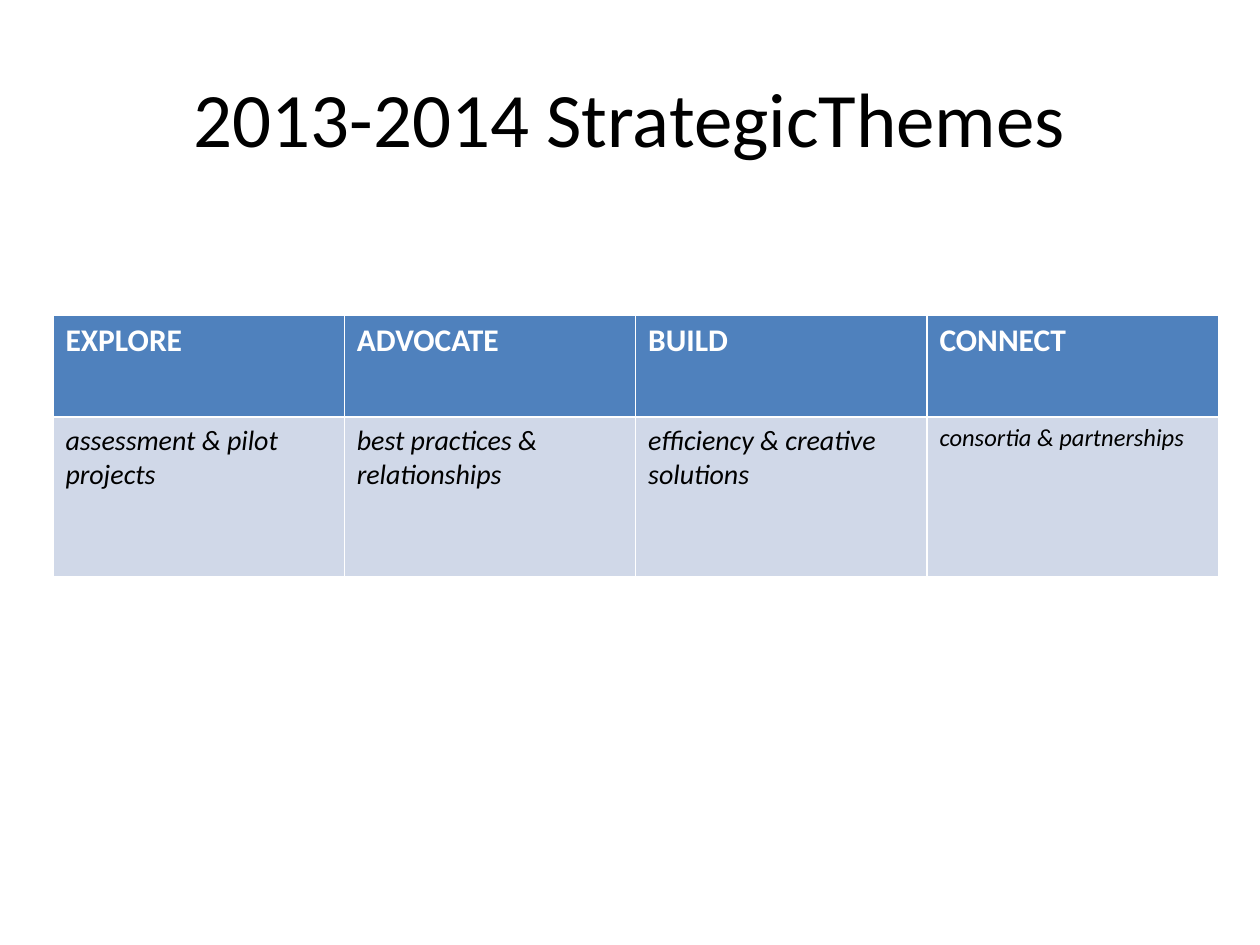
import dataclasses

import pptx
import pptx.dml.color
import pptx.enum.text
import pptx.util
from pptx.util import Inches


@dataclasses.dataclass(frozen=True)
class Theme:
    font: str = "Calibri"
    text: str = "000000"
    header_text: str = "FFFFFF"
    header_fill: str = "4F81BD"
    body_fill: str = "D0D8E8"
    title_size: int = 44
    header_size: int = 18
    body_size: int = 16
    small_size: int = 14


THEME = Theme()
TITLE = "2013-2014 StrategicThemes"
STRATEGIC_THEMES = [
    ("EXPLORE", "assessment & pilot projects", THEME.body_size),
    ("ADVOCATE", "best practices & relationships", THEME.body_size),
    ("BUILD", "efficiency & creative solutions", THEME.body_size),
    ("CONNECT", "consortia & partnerships", THEME.small_size),
]


def rgb(color):
    return pptx.dml.color.RGBColor.from_string(color)


def write_text(text_frame, text, *, size, color=THEME.text, bold=False,
               italic=False, align=pptx.enum.text.PP_ALIGN.LEFT):
    paragraph = text_frame.paragraphs[0]
    paragraph.alignment = align
    run = paragraph.add_run()
    run.text = text
    run.font.name = THEME.font
    run.font.size = pptx.util.Pt(size)
    run.font.color.rgb = rgb(color)
    run.font.bold = bold
    run.font.italic = italic


def add_title(slide, left, top, width, height):
    text_frame = slide.shapes.add_textbox(left, top, width, height).text_frame
    text_frame.word_wrap = True
    text_frame.vertical_anchor = pptx.enum.text.MSO_ANCHOR.MIDDLE
    write_text(text_frame, TITLE, size=THEME.title_size,
               align=pptx.enum.text.PP_ALIGN.CENTER)


def fill_cell(cell, text, fill, **text_format):
    cell.fill.solid()
    cell.fill.fore_color.rgb = rgb(fill)
    write_text(cell.text_frame, text, **text_format)


def add_themes_table(slide, left, top, width, height, header_height):
    table = slide.shapes.add_table(
        2, len(STRATEGIC_THEMES), left, top, width, height).table
    table.rows[0].height = header_height
    table.rows[1].height = height - header_height
    for column, (heading, detail, size) in enumerate(STRATEGIC_THEMES):
        fill_cell(table.cell(0, column), heading, THEME.header_fill,
                  size=THEME.header_size, color=THEME.header_text, bold=True)
        fill_cell(table.cell(1, column), detail, THEME.body_fill,
                  size=size, italic=True)


def main():
    presentation = pptx.Presentation()
    presentation.slide_width = Inches(10)
    presentation.slide_height = Inches(7.5)
    slide = presentation.slides.add_slide(presentation.slide_layouts[6])
    add_title(slide, Inches(0.5), Inches(0.3), Inches(9), Inches(1.25))
    add_themes_table(slide, Inches(0.42), Inches(2.5), Inches(9.25),
                     Inches(2.08), header_height=Inches(0.81))
    presentation.save("out.pptx")


if __name__ == "__main__":
    main()
